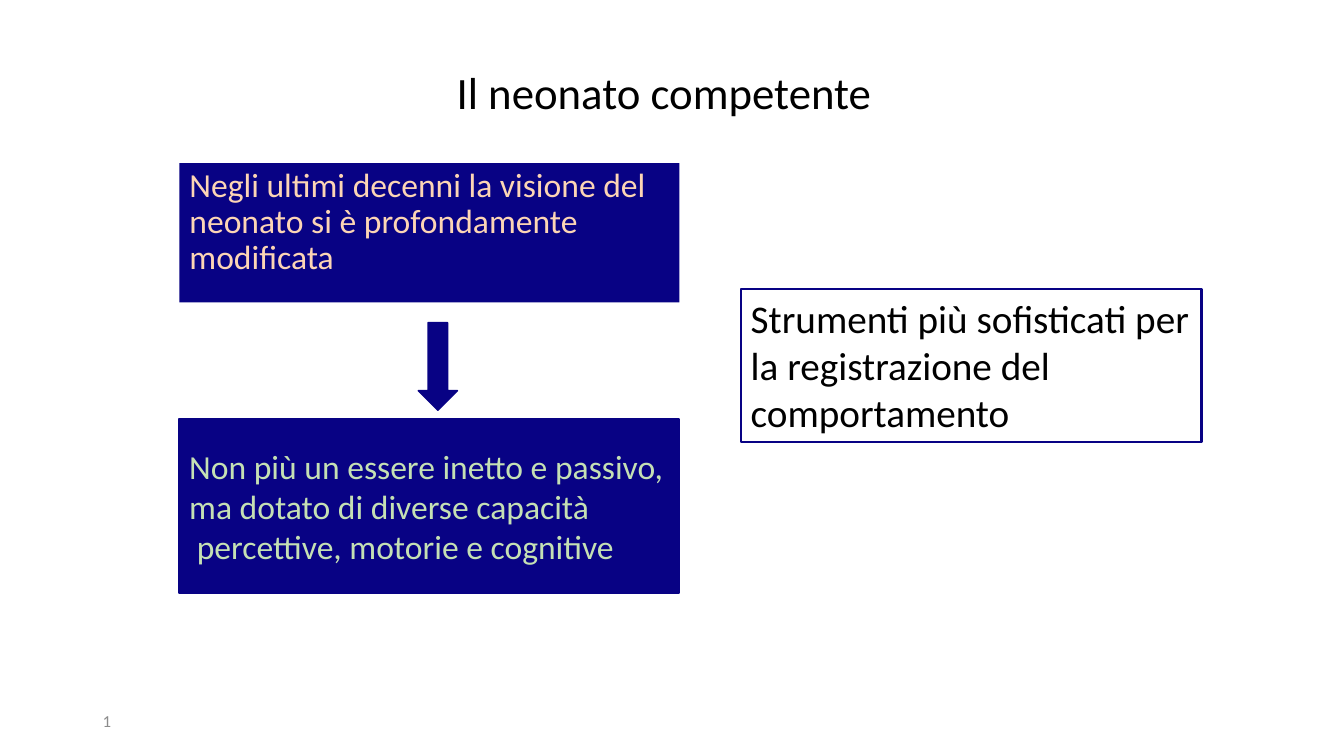
"""Build the slide on the competent newborn."""
from lxml.etree import SubElement
from pptx import Presentation
from pptx.dml.color import RGBColor
from pptx.enum.shapes import MSO_SHAPE
from pptx.enum.text import MSO_ANCHOR, MSO_AUTO_SIZE, PP_ALIGN
from pptx.oxml.ns import qn
from pptx.util import Cm, Pt

NAVY = RGBColor(0x08, 0x02, 0x84)
PEACH = RGBColor(0xFC, 0xD5, 0xB5)
GREEN = RGBColor(0xC5, 0xE0, 0xB4)
BLACK = RGBColor(0x00, 0x00, 0x00)
GREY = RGBColor(0x8C, 0x8C, 0x8C)

COLUMN_LEFT, COLUMN_WIDTH = 4.52, 12.6


def place(box, left, top, width, height):
    """Move and size a box in centimetres."""
    box.left, box.top, box.width, box.height = map(Cm, (left, top, width, height))


def write(box, lines, size, colour, anchor=MSO_ANCHOR.TOP,
          align=PP_ALIGN.LEFT, spacing=1.0, before=0):
    """Fill a box with one formatted paragraph per line."""
    frame = box.text_frame
    frame.text = "\n".join(lines)
    frame.word_wrap = True
    frame.auto_size = MSO_AUTO_SIZE.NONE
    frame.vertical_anchor = anchor
    for para in frame.paragraphs:
        para.alignment = align
        para.line_spacing = spacing
        para.space_before = Pt(before)
        para.font.name = "Calibri"
        para.font.size = Pt(size)
        para.font.color.rgb = colour


def add_block(page, kind, area, line_width, filled=True):
    """Add a navy-outlined shape, solid or hollow."""
    block = page.shapes.add_shape(kind, *map(Cm, area))
    block.shadow.inherit = False
    if filled:
        block.fill.solid()
        block.fill.fore_color.rgb = NAVY
    else:
        block.fill.background()
    block.line.color.rgb = NAVY
    block.line.width = Pt(line_width)
    return block


def add_page_number(page):
    """Add the slide number as a field."""
    box = page.shapes.add_textbox(Cm(2.34), Cm(17.65), Cm(7.62), Cm(1.02))
    write(box, [""], 12, GREY, MSO_ANCHOR.MIDDLE)
    field = SubElement(box.text_frame.paragraphs[0]._p, qn("a:fld"),
                       id="{B6F15528-21DE-4FAA-801E-634DDDAF4B2B}", type="slidenum")
    SubElement(field, qn("a:t")).text = "1"


def main():
    """Build and save the deck."""
    deck = Presentation()
    deck.slide_width, deck.slide_height = Cm(33.87), Cm(19.05)
    page = deck.slides.add_slide(deck.slide_layouts[0])

    title = page.shapes.title
    place(title, 5.94, 1.52, 21.59, 1.6)
    write(title, ["Il neonato competente"], 32, BLACK,
          MSO_ANCHOR.BOTTOM, PP_ALIGN.CENTER, 0.9)

    premise = page.placeholders[1]
    place(premise, COLUMN_LEFT, 4.11, COLUMN_WIDTH, 3.51)
    premise.fill.solid()
    premise.fill.fore_color.rgb = NAVY
    write(premise, ["Negli ultimi decenni la visione del neonato si è profondamente modificata"],
          24, PEACH, spacing=0.9, before=4.8)

    outcome = add_block(page, MSO_SHAPE.RECTANGLE,
                        (COLUMN_LEFT, 10.57, COLUMN_WIDTH, 4.37), 1.5)
    write(outcome, ["Non più un essere inetto e passivo,", "ma dotato di diverse capacità",
                    " percettive, motorie e cognitive"], 24, GREEN, MSO_ANCHOR.MIDDLE)

    add_block(page, MSO_SHAPE.DOWN_ARROW, (10.54, 8.13, 0.99, 2.21), 1)

    tools = add_block(page, MSO_SHAPE.RECTANGLE, (18.67, 7.29, 11.61, 3.86), 1.5, filled=False)
    write(tools, ["Strumenti più sofisticati per la registrazione del comportamento"],
          28, BLACK, before=14)

    add_page_number(page)
    deck.save("out.pptx")


if __name__ == "__main__":
    main()
